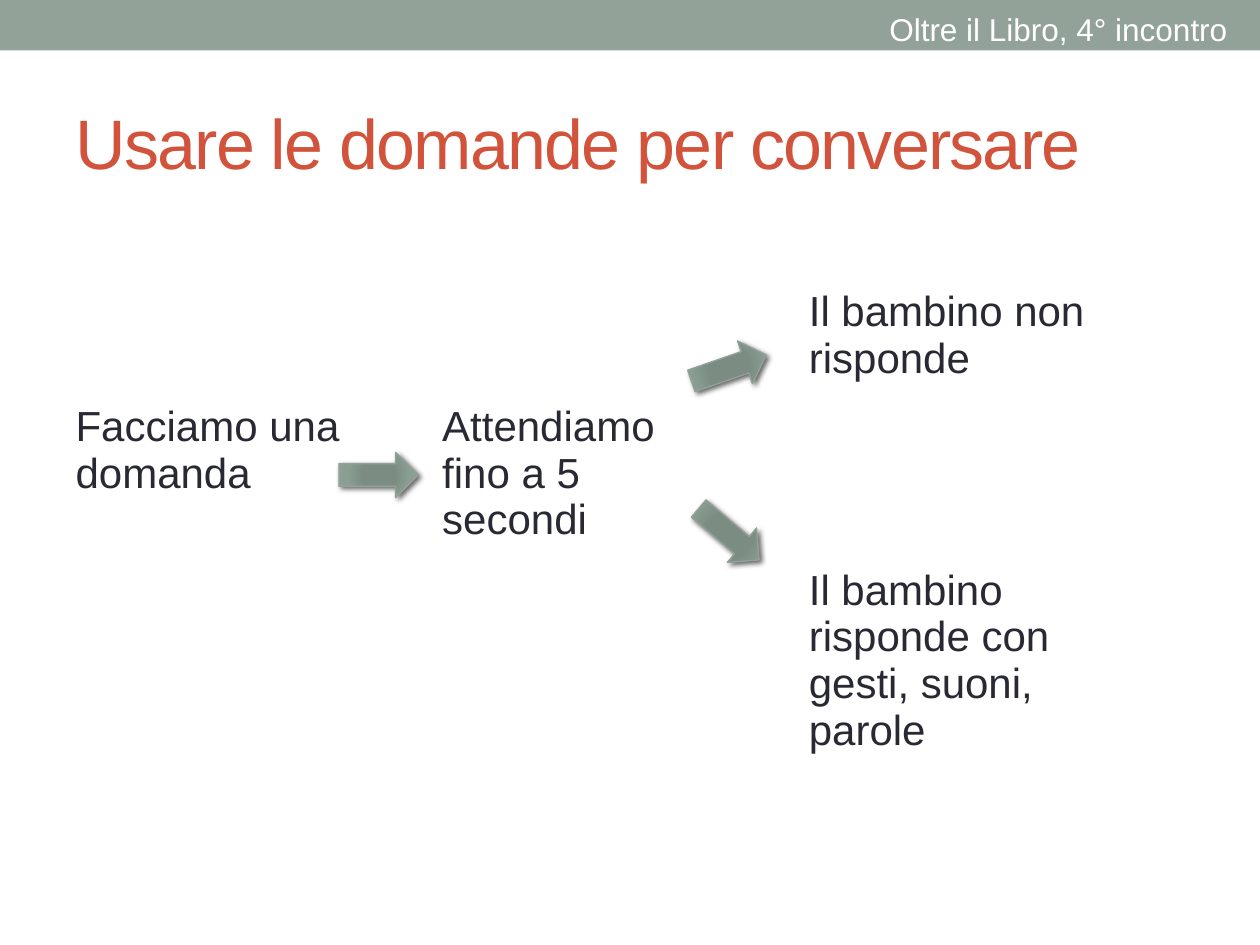
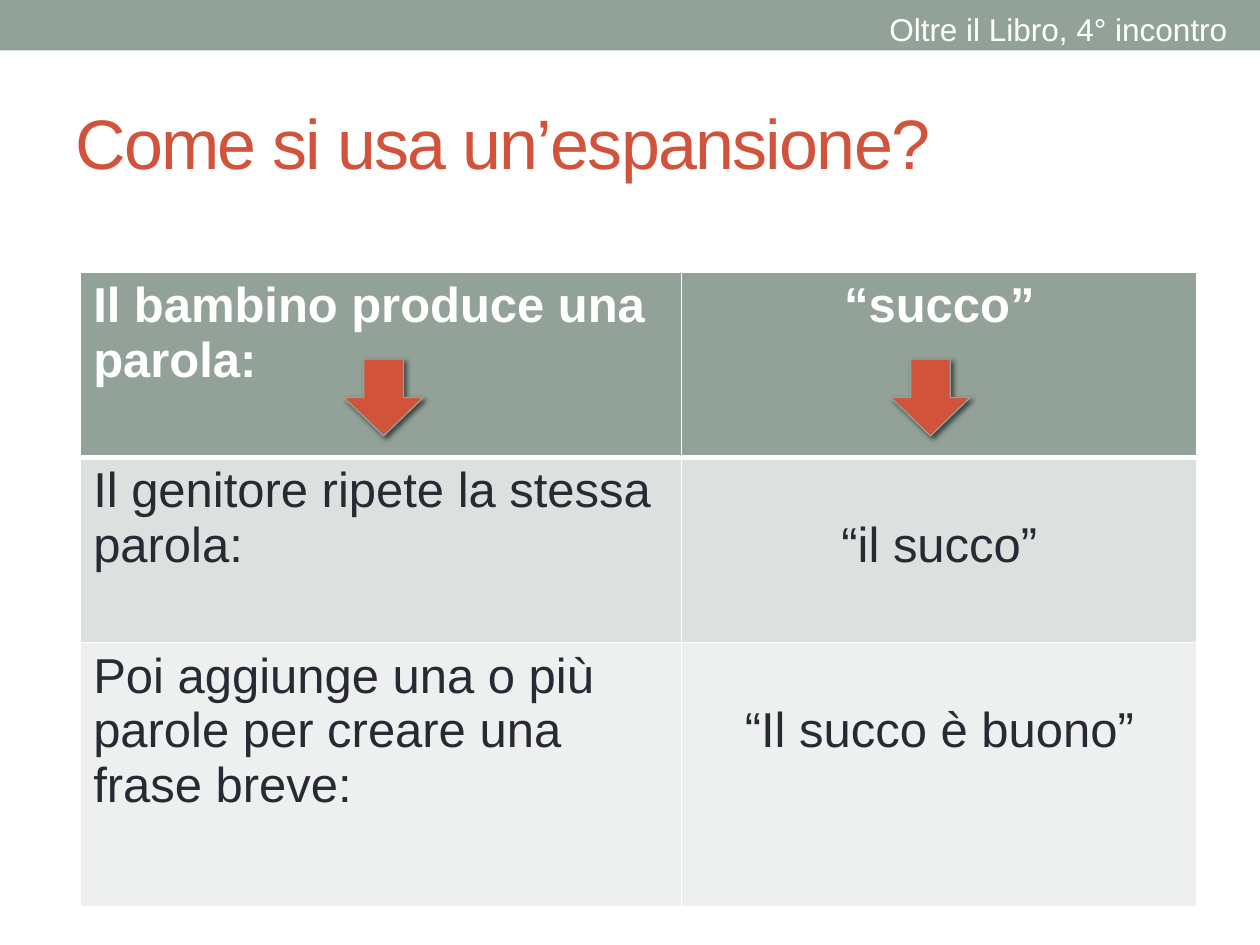
from lxml.etree import SubElement
from pptx import Presentation
from pptx.dml.color import RGBColor
from pptx.enum.shapes import MSO_SHAPE
from pptx.enum.text import MSO_ANCHOR, PP_ALIGN
from pptx.oxml.ns import qn
from pptx.util import Inches, Pt

# Grid: 100 columns by 75 rows
COLS, ROWS = 100, 75
WIDTH, HEIGHT = Inches(10), Inches(7.5)

# Shared style
FONT = "Arial"
SAGE, RUST, INK, WHITE = "93A299", "D2533C", "292934", "FFFFFF"
ROW_FILLS = [SAGE, "DCE0DE", "EEF0EF"]
ARROW_STOPS = [(0, "7B8E82"), (34, "7B8D83"), (70, "8A9E92"), (100, SAGE)]
HEADER = "Oltre il Libro, 4° incontro"


def rgb(color):
    return RGBColor.from_string(color)


def x(cols):
    return round(WIDTH * cols / COLS)


def y(rows):
    return round(HEIGHT * rows / ROWS)


def box(left, top, width, height):
    return x(left), y(top), x(width), y(height)


def add_node(parent, tag, **attrs):
    return SubElement(parent, qn(tag), {k: str(v) for k, v in attrs.items()})


def add_color(parent, color):
    return add_node(parent, "a:srgbClr", val=color)


def write(tf, text, size, color, bold=False, align=PP_ALIGN.LEFT):
    tf.text = text
    for p in tf.paragraphs:
        p.alignment = align
        for r in p.runs:
            r.font.name, r.font.size, r.font.bold = FONT, Pt(size), bold
            r.font.color.rgb = rgb(color)


def add_text(s, text, place, size, color, wrap=True, anchor=MSO_ANCHOR.TOP):
    tf = s.shapes.add_textbox(*place).text_frame
    tf.word_wrap, tf.vertical_anchor = wrap, anchor
    write(tf, text, size, color)
    return tf


def add_slide(prs, title):
    """Blank slide with the top band, the running header and a title."""
    s = prs.slides.add_slide(prs.slide_layouts[6])
    band = s.shapes.add_shape(MSO_SHAPE.RECTANGLE, *box(0, 0, COLS, 4))
    band.shadow.inherit = False
    band.fill.solid()
    band.fill.fore_color.rgb = rgb(SAGE)
    band.line.fill.background()
    add_text(s, HEADER, box(69.6, 0.3, 29.1, 4), 18, WHITE, wrap=False)
    tf = add_text(s, title, box(5, 5.8, 90, 10.8), 40, RUST,
                  anchor=MSO_ANCHOR.MIDDLE)
    for r in tf.paragraphs[0].runs:
        r.font._element.set("spc", "-100")
    return s


def add_shadow(sp):
    sp.shadow.inherit = False
    effects = sp._element.spPr.find(qn("a:effectLst"))
    shadow = add_node(effects, "a:outerShdw", blurRad=Pt(3), dist=Pt(2),
                      dir=45 * 60000, rotWithShape=0)
    add_node(add_color(shadow, "000000"), "a:alpha", val=60000)


def add_radial_fill(sp, stops):
    solid = sp._element.spPr.find(qn("a:solidFill"))
    grad = add_node(sp._element.spPr, "a:gradFill", rotWithShape=1)
    stop_list = add_node(grad, "a:gsLst")
    for pos, color in stops:
        add_color(add_node(stop_list, "a:gs", pos=pos * 1000), color)
    circle = add_node(grad, "a:path", path="circle")
    add_node(circle, "a:fillToRect", **dict.fromkeys("ltrb", 100000))
    solid.getparent().replace(solid, grad)


def add_arrow(s, kind, place, color, rotation=0, stops=None):
    sp = s.shapes.add_shape(kind, *place)
    sp.rotation = rotation
    sp.fill.solid()
    sp.fill.fore_color.rgb = rgb(color)
    sp.line.color.rgb, sp.line.width = rgb(SAGE), Pt(0.75)
    add_shadow(sp)
    if stops:
        add_radial_fill(sp, stops)


def set_borders(cell, bottom):
    """White cell borders, 1 pt except at the bottom."""
    tc_pr = cell._tc.get_or_add_tcPr()
    for i, side in enumerate("LRTB"):
        width = Pt(bottom if side == "B" else 1)
        line = add_node(tc_pr, "a:ln" + side, w=width)
        add_color(add_node(line, "a:solidFill"), WHITE)
        tc_pr.insert(i, line)


def add_table(s, left, top, widths, heights):
    place = box(left, top, sum(widths), sum(heights))
    table = s.shapes.add_table(len(heights), len(widths), *place).table
    for column, width in zip(table.columns, widths):
        column.width = x(width)
    for i, (row, height) in enumerate(zip(table.rows, heights)):
        row.height = y(height)
        for cell in row.cells:
            cell.fill.background()
            set_borders(cell, bottom=1 if i else 3)
    return table


def add_questions(prs):
    s = add_slide(prs, "Usare le domande per conversare")
    table = add_table(s, 5, 22.4, [29.1] * 3, [9.1, 10.2, 13])
    steps = {
        (0, 2): "Il bambino non risponde",
        (1, 0): "Facciamo una domanda",
        (1, 1): "Attendiamo\nfino a 5\nsecondi",
        (2, 2): "Il bambino risponde con gesti, suoni, parole",
    }
    for (row, col), text in steps.items():
        write(table.cell(row, col).text_frame, text, 24, INK)

    # Arrows between the steps
    for left, top, angle in [(54.7, 27.4, 340.9), (54.7, 40.6, 40.4),
                             (26.9, 35.9, 0)]:
        add_arrow(s, MSO_SHAPE.RIGHT_ARROW, box(left, top, 6.3, 3.6),
                  SAGE, angle, ARROW_STOPS)


def add_expansion(prs):
    s = add_slide(prs, "Come si usa un’espansione?")
    table = add_table(s, 6.4, 21.6, [47.7, 40.9], [14.7, 14.7, 21])
    examples = [
        ("Il bambino produce una parola:", "“succo”"),
        ("Il genitore ripete la stessa parola:", "“il succo”"),
        ("Poi aggiunge una o più parole per creare una frase breve:",
         "“Il succo è buono”"),
    ]
    for i, (texts, fill) in enumerate(zip(examples, ROW_FILLS)):
        head = i == 0
        for j, text in enumerate(texts):
            cell = table.cell(i, j)
            cell.fill.solid()
            cell.fill.fore_color.rgb = rgb(fill)
            write(cell.text_frame, text, 28, WHITE if head else INK, head,
                  PP_ALIGN.CENTER if j else PP_ALIGN.LEFT)
            # Body examples sit one line lower
            if j and not head:
                cell.margin_top = y(4.8)

    # Arrows leading down from the header row
    for left in (27.3, 70.7):
        add_arrow(s, MSO_SHAPE.DOWN_ARROW, box(left, 28.5, 6.3, 6.1), RUST)


def main():
    prs = Presentation()
    prs.slide_width, prs.slide_height = WIDTH, HEIGHT
    add_questions(prs)
    add_expansion(prs)
    prs.save("out.pptx")


if __name__ == "__main__":
    main()
